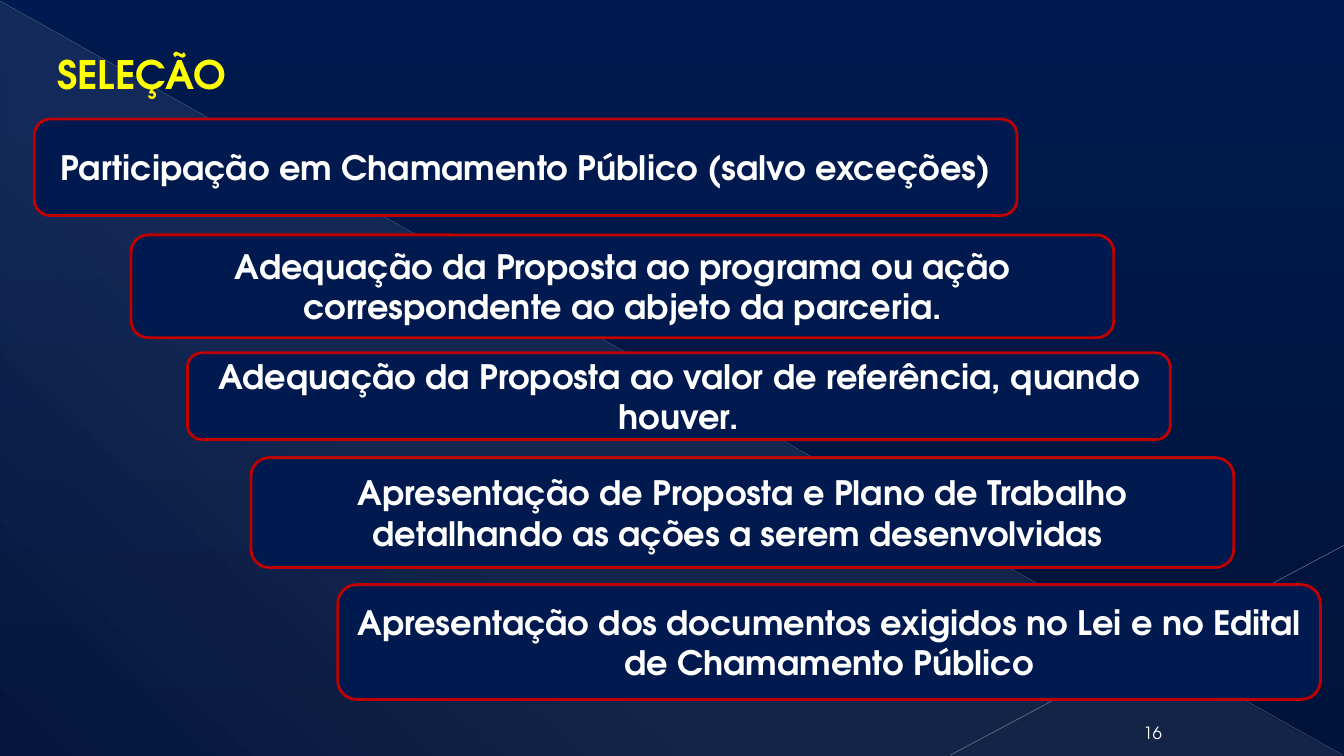
from dataclasses import dataclass

from lxml.etree import SubElement
from pptx import Presentation
from pptx.dml.color import RGBColor
from pptx.enum.shapes import MSO_CONNECTOR, MSO_SHAPE
from pptx.enum.text import MSO_ANCHOR, PP_ALIGN
from pptx.oxml.ns import qn
from pptx.util import Pt


@dataclass(frozen=True)
class Theme:
    font: str = "TeX Gyre Adventor"
    navy: str = "001A4F"
    deep: str = "00133A"
    haze: str = "D2D2D2"
    red: str = "C00000"
    white: str = "FFFFFF"
    yellow: str = "FFFF00"
    title: int = 28
    body: int = 24
    small: int = 12


THEME = Theme()
WIDTH = 702

# Left, top, height and text of each step
STEPS = [
    (24.5, 85, 69, "Participação em Chamamento Público (salvo exceções)"),
    (93.6, 167.8, 73.4, "Adequação da Proposta ao programa ou ação "
                        "correspondente ao abjeto da parceria."),
    (133.9, 252, 62, "Adequação da Proposta ao valor de referência, "
                     "quando houver."),
    (179.3, 326.9, 78.5, "Apresentação de Proposta e Plano de Trabalho "
                         "detalhando as ações a serem desenvolvidas "),
    (241.2, 417.6, 82, "Apresentação dos documentos exigidos no Lei e no "
                       "Edital de Chamamento Público"),
]

# Start, end, colour, weight and opacity of each thin line
RAYS = [
    ((0, 0.7), (959, 539.3), "BFBFBF", 0.39, 35),
    ((960, 389.5), (679, 539.3), "C6C6C6", 0.47, 45),
]


def style(item, values):
    for name, value in values.items():
        setattr(item, name, value)


def fade(color, percent):
    SubElement(color, qn("a:alpha"), val=str(percent * 1000))


def blend(fill, root, angle, stops):
    """Give a fill gradient stops of (place, colour, opacity)."""
    fill.gradient()
    fill.gradient_angle = 360 - angle
    group = next(root.iter(qn("a:gsLst")))
    for old in list(group):
        group.remove(old)
    for place, color, percent in stops:
        stop = SubElement(group, qn("a:gs"), pos=str(place * 1000))
        node = SubElement(stop, qn("a:srgbClr"), val=color)
        if percent < 100:
            fade(node, percent)


def write(shape, text, size, color, bold=True,
          align=PP_ALIGN.CENTER, anchor=MSO_ANCHOR.MIDDLE):
    frame = shape.text_frame
    style(frame, {"word_wrap": True, "vertical_anchor": anchor})
    para = frame.paragraphs[0]
    para.alignment = align
    run = para.add_run()
    run.text = text
    style(run.font, {"name": THEME.font, "size": Pt(size), "bold": bold})
    run.font.color.rgb = RGBColor.from_string(color)


def add_form(slide, kind, left, top, width, height):
    form = slide.shapes.add_shape(
        kind, Pt(left), Pt(top), Pt(width), Pt(height))
    form.shadow.inherit = False
    return form


def add_ray(slide, start, end, color, weight, percent):
    ray = slide.shapes.add_connector(
        MSO_CONNECTOR.STRAIGHT, *map(Pt, start + end))
    ray.line.width = Pt(weight)
    ray.line.color.rgb = RGBColor.from_string(color)
    props = ray._element.spPr
    fade(next(props.iter(qn("a:srgbClr"))), percent)
    SubElement(props, qn("a:effectLst"))


def add_step(slide, left, top, height, text):
    box = add_form(slide, MSO_SHAPE.ROUNDED_RECTANGLE,
                   left, top, WIDTH, height)
    box.fill.solid()
    box.fill.fore_color.rgb = RGBColor.from_string(THEME.navy)
    box.line.color.rgb = RGBColor.from_string(THEME.red)
    box.line.width = Pt(2)
    write(box, text, THEME.body, THEME.white)


def add_label(slide, left, top, width, height, *args, **look):
    label = slide.shapes.add_textbox(
        Pt(left), Pt(top), Pt(width), Pt(height))
    write(label, *args, **look)


def main():
    deck = Presentation()
    style(deck, {"slide_width": Pt(960), "slide_height": Pt(540)})
    slide = deck.slides.add_slide(deck.slide_layouts[6])

    # Backdrop
    blend(slide.background.fill, slide._element, 90,
          [(0, THEME.navy, 100), (100, THEME.deep, 100)])
    wedge = add_form(slide, MSO_SHAPE.RIGHT_TRIANGLE, 0.7, 1.4, 958.3, 538.6)
    wedge.line.fill.background()
    blend(wedge.fill, wedge._element, 133,
          [(0, THEME.haze, 10), (70, THEME.haze, 8), (100, THEME.haze, 1)])
    for ray in RAYS:
        add_ray(slide, *ray)

    # Page number and title
    add_label(slide, 797, 510.5, 52.6, 23.8, "16", THEME.small, THEME.white,
              bold=False, anchor=MSO_ANCHOR.BOTTOM)
    add_label(slide, 33.8, 32.4, 900, 41, "SELEÇÃO", THEME.title,
              THEME.yellow, align=PP_ALIGN.LEFT, anchor=MSO_ANCHOR.TOP)

    # Steps
    for step in STEPS:
        add_step(slide, *step)

    deck.save("out.pptx")


if __name__ == "__main__":
    main()
